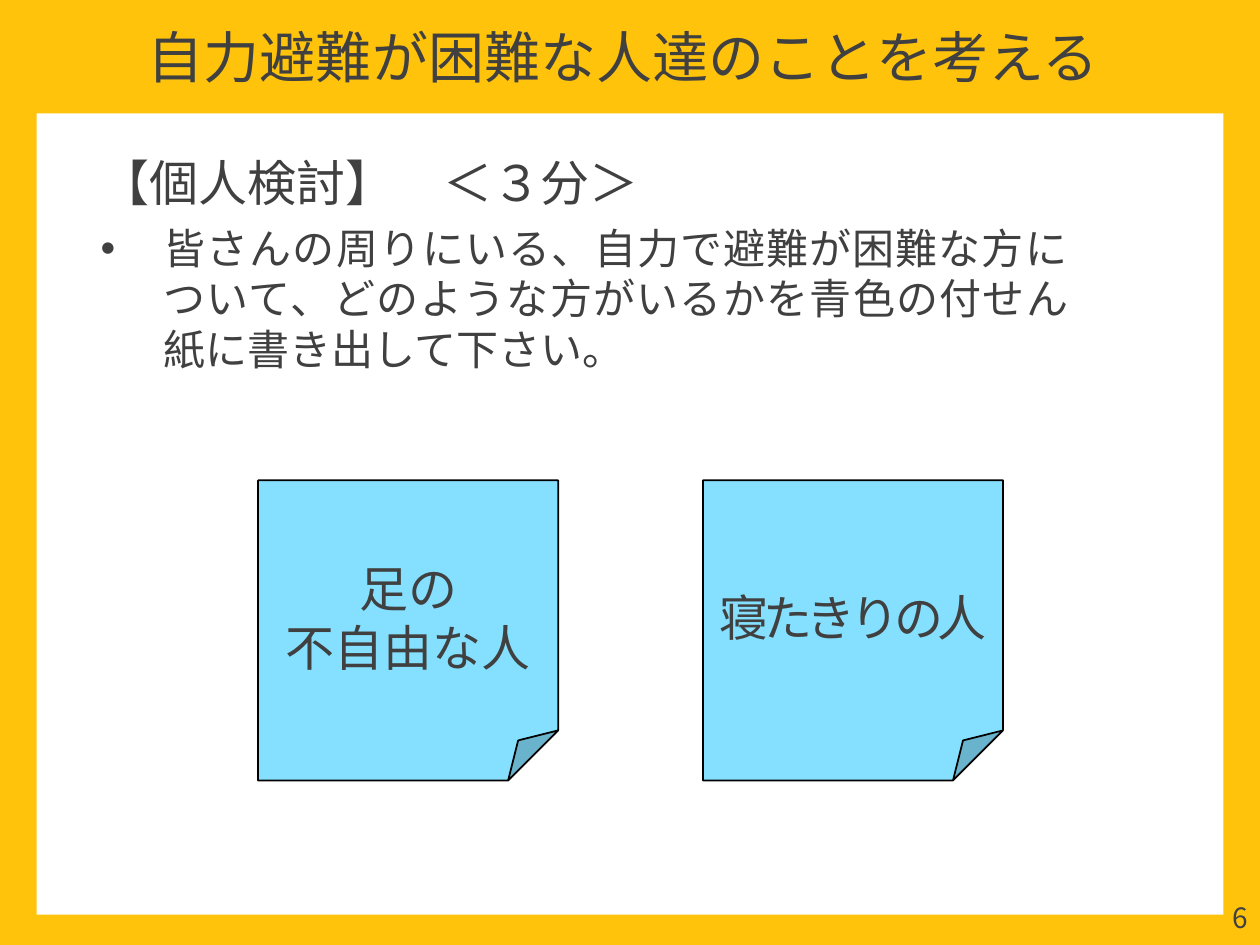
from lxml import etree
from pptx import Presentation
from pptx.dml.color import RGBColor
from pptx.enum import shapes, text
from pptx.oxml import ns
from pptx.util import Pt

COLORS = {"frame": "FFC30C", "panel": "FFFFFF", "text": "404040", "note": "85E0FF", "edge": "000000"}
FONT = "Noto Sans CJK JP"
SHAPE = shapes.MSO_SHAPE
ALIGN = text.PP_ALIGN
MIDDLE = text.MSO_ANCHOR.MIDDLE


def color(name):
    return RGBColor.from_string(COLORS[name])


def write(paragraph, words, size, align):
    paragraph.text = words
    paragraph.alignment = align
    font = paragraph.font
    font.size = Pt(size)
    font.name = FONT
    font.color.rgb = color("text")
    defaults = paragraph._p.pPr.find(ns.qn("a:defRPr"))
    etree.SubElement(defaults, ns.qn("a:ea"), typeface=FONT)


def add_box(slide, kind, box, fill=None, edge=None):
    shape = slide.shapes.add_shape(kind, *map(Pt, box))
    shape.shadow.inherit = False
    if fill:
        shape.fill.solid()
        shape.fill.fore_color.rgb = color(fill)
    else:
        shape.fill.background()
    if edge:
        shape.line.color.rgb = color(edge)
        shape.line.width = Pt(1)
    else:
        shape.line.fill.background()
    return shape


def set_frame(frame, left, top, right, bottom):
    frame.word_wrap = True
    frame.vertical_anchor = MIDDLE
    frame.margin_left, frame.margin_top = Pt(left), Pt(top)
    frame.margin_right, frame.margin_bottom = Pt(right), Pt(bottom)


def add_background(slide, width, height):
    add_box(slide, SHAPE.RECTANGLE, (0, 0, width, height), "frame")
    side, top, bottom = 20.9, 64.8, 17.3
    panel = (side, top, width - 2 * side, height - top - bottom)
    add_box(slide, SHAPE.RECTANGLE, panel, "panel")


def add_label(slide, box, words, size, align, spacing=None):
    frame = slide.shapes.add_textbox(*map(Pt, box)).text_frame
    frame.word_wrap = True
    label = frame.paragraphs[0]
    write(label, words, size, align)
    label.line_spacing = spacing


def add_task(slide, box, heading, instruction):
    task = add_box(slide, SHAPE.ROUNDED_RECTANGLE, box)
    task.adjustments[0] = 0
    frame = task.text_frame
    set_frame(frame, 7.2, 2.9, 7.2, 5.8)
    head = frame.paragraphs[0]
    write(head, heading, 28, ALIGN.JUSTIFY)
    head.space_after = Pt(6)
    item = frame.add_paragraph()
    properties = item._p.get_or_add_pPr()
    properties.set("marL", str(Pt(36)))
    properties.set("indent", str(-Pt(36)))
    etree.SubElement(properties, ns.qn("a:buFont"), typeface="Arial")
    etree.SubElement(properties, ns.qn("a:buChar"), char="•")
    write(item, instruction, 24, ALIGN.JUSTIFY)


def add_sticky_note(slide, box, words, tracking):
    note = add_box(slide, SHAPE.FOLDED_CORNER, box, "note", "edge")
    set_frame(note.text_frame, 7.2, 17.3, 7.2, 3.6)
    answer = note.text_frame.paragraphs[0]
    write(answer, words, 28, ALIGN.CENTER)
    if tracking:
        for run in answer.runs:
            run._r.get_or_add_rPr().set("spc", str(tracking * 100))


def main():
    deck = Presentation()
    width, height = 720, 540
    deck.slide_width, deck.slide_height = Pt(width), Pt(height)
    slide = deck.slides.add_slide(deck.slide_layouts[6])

    add_background(slide, width, height)
    add_label(slide, (558, 511.2, 162, 28.8), "6", 16, ALIGN.RIGHT)
    add_label(slide, (10.8, 13.7, 691.2, 51.1),
              "自力避難が困難な人達のことを考える", 32, ALIGN.CENTER, 0.9)
    add_task(slide, (50.4, 64.8, 567.4, 174.2), "【個人検討】　＜３分＞",
             "皆さんの周りにいる、自力で避難が困難な方に\n"
             "ついて、どのような方がいるかを青色の付せん紙に書き出して下さい。")

    left, top, side, pitch = 147.5, 274.5, 171.5, 254.2
    answers = [("足の\n不自由な人", 0), ("寝たきりの人", -3)]
    for index, (words, tracking) in enumerate(answers):
        add_sticky_note(slide, (left + index * pitch, top, side, side), words, tracking)

    deck.save("out.pptx")


if __name__ == "__main__":
    main()
